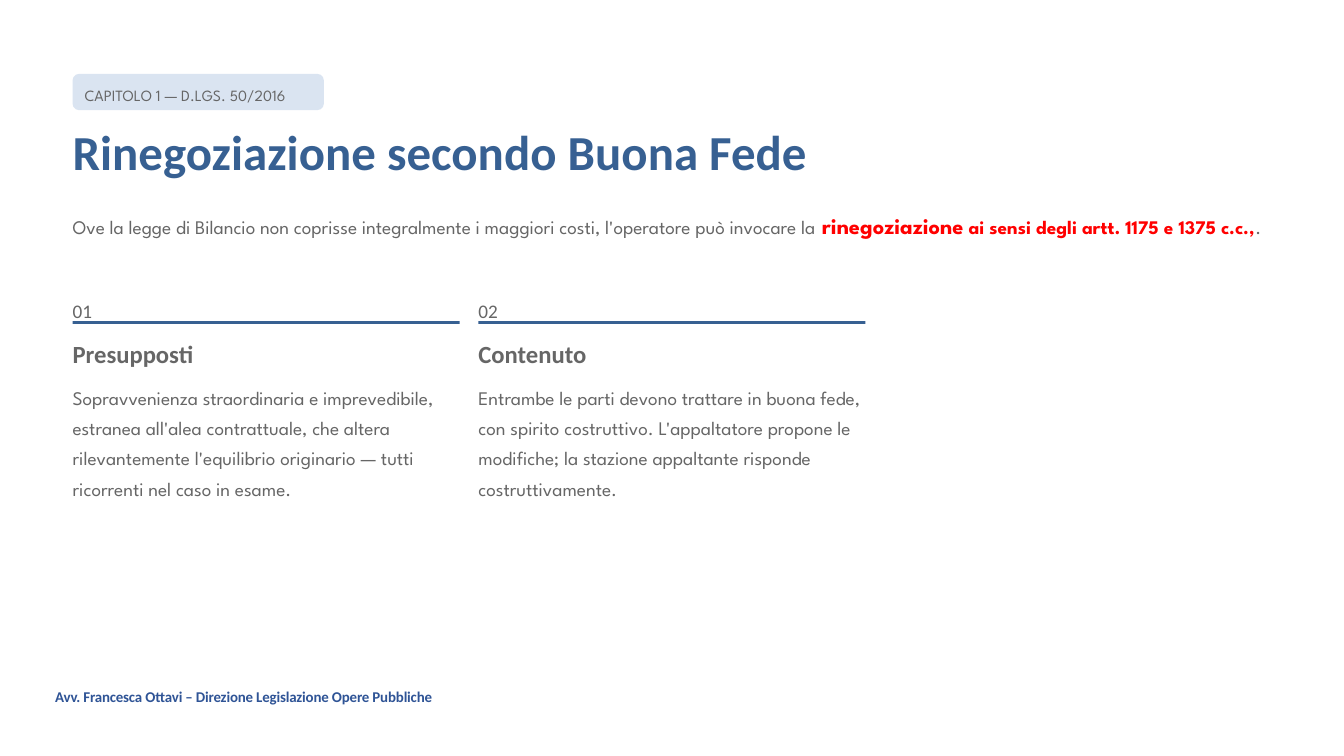
from pptx import Presentation
from pptx.dml.color import RGBColor
from pptx.enum.shapes import MSO_SHAPE as Shape
from pptx.enum.text import MSO_ANCHOR as Anchor, MSO_AUTO_SIZE as Fit, PP_ALIGN as Align
from pptx.util import Inches, Pt

THEME = {
    "blue": "376092", "navy": "2F5496", "pale": "DAE4F1",
    "grey": "666666", "red": "FF0000",
    "head": "Calibri", "body": "League Spartan",
}
# font, size, colour, bold, line spacing in points
STYLES = {
    "foot": ("head", 8, "navy", True, None),
    "tag": ("body", 8.4, "grey", False, 13.1),
    "title": ("head", 26.25, "blue", True, 33.1),
    "text": ("body", 10.3, "grey", False, 16.2),
    "key": ("body", 12, "red", True, 16.2),
    "law": ("body", 10.3, "red", True, 16.2),
    "num": ("head", 10.3, "grey", False, 16.2),
    "name": ("head", 13.15, "grey", True, 16.6),
}
TIGHT = {"foot": -10}  # letter spacing in hundredths of a point

FOOTER = "Avv. Francesca Ottavi – Direzione Legislazione Opere Pubbliche"
TAG = "CAPITOLO 1 — D.LGS. 50/2016"
TITLE = "Rinegoziazione secondo Buona Fede"
INTRO = [
    ("Ove la legge di Bilancio non coprisse integralmente i maggiori costi, "
     "l'operatore può invocare la ", "text"),
    ("rinegoziazione", "key"),
    (" ", "text"),
    ("ai sensi degli artt. 1175 e 1375 c.c.,", "law"),
    (".", "text"),
]
COLUMNS = [
    ("Presupposti",
     "Sopravvenienza straordinaria e imprevedibile, estranea all'alea contrattuale, "
     "che altera rilevantemente l'equilibrio originario — tutti ricorrenti nel caso in esame."),
    ("Contenuto",
     "Entrambe le parti devono trattare in buona fede, con spirito costruttivo. "
     "L'appaltatore propone le modifiche; la stazione appaltante risponde costruttivamente."),
]
LEFT, WIDE, GAP = 0.54, 2.88, 0.14


def color(name):
    return RGBColor.from_string(THEME[name])


def write(box, parts):
    """Fill a box with one paragraph made of (text, style) parts."""
    frame = box.text_frame
    frame.word_wrap = True
    frame.auto_size = Fit.NONE
    frame.vertical_anchor = Anchor.TOP
    frame.margin_left = frame.margin_right = 0
    frame.margin_top = frame.margin_bottom = 0
    para = frame.paragraphs[0]
    para.alignment = Align.LEFT
    for text, style in parts:
        face, size, tint, bold, lead = STYLES[style]
        if lead:
            para.line_spacing = Pt(lead)
        run = para.add_run()
        run.text = text
        font = run.font
        font.name, font.size, font.bold = THEME[face], Pt(size), bold
        font.color.rgb = color(tint)
        if style in TIGHT:
            run._r.get_or_add_rPr().set("spc", str(TIGHT[style]))


def label(slide, area, *parts):
    write(slide.shapes.add_textbox(*map(Inches, area)), parts)


def block(slide, kind, area, tint):
    shape = slide.shapes.add_shape(kind, *map(Inches, area))
    shape.shadow.inherit = False
    shape.fill.solid()
    shape.fill.fore_color.rgb = color(tint)
    shape.line.fill.background()
    return shape


def main():
    deck = Presentation()
    deck.slide_width = Inches(10)
    deck.slide_height = deck.slide_width * 9 // 16
    slide = deck.slides.add_slide(deck.slide_layouts[5])

    title = slide.shapes.title
    title.left, title.top = Inches(LEFT), Inches(0.88)
    title.width, title.height = Inches(6.58), Inches(0.46)
    write(title, [(TITLE, "title")])

    label(slide, (0.41, 5.12, 2.92, 0.16), (FOOTER, "foot"))
    chip = block(slide, Shape.ROUNDED_RECTANGLE, (LEFT, 0.55, 1.87, 0.27), "pale")
    chip.adjustments[0] = 0.18
    label(slide, (0.63, 0.6, 1.69, 0.18), (TAG, "tag"))
    label(slide, (LEFT, 1.55, 8.91, 0.46), *INTRO)

    for i, (name, text) in enumerate(COLUMNS):
        x = LEFT + i * (WIDE + GAP)
        label(slide, (x, 2.17, 0.29, 0.18), (f"{i + 1:02}", "num"))
        block(slide, Shape.RECTANGLE, (x, 2.39, WIDE, 0.02), "blue")
        label(slide, (x, 2.51, 1.84, 0.23), (name, "name"))
        label(slide, (x, 2.82, WIDE, 1.15), (text, "text"))

    deck.save("out.pptx")


if __name__ == "__main__":
    main()
